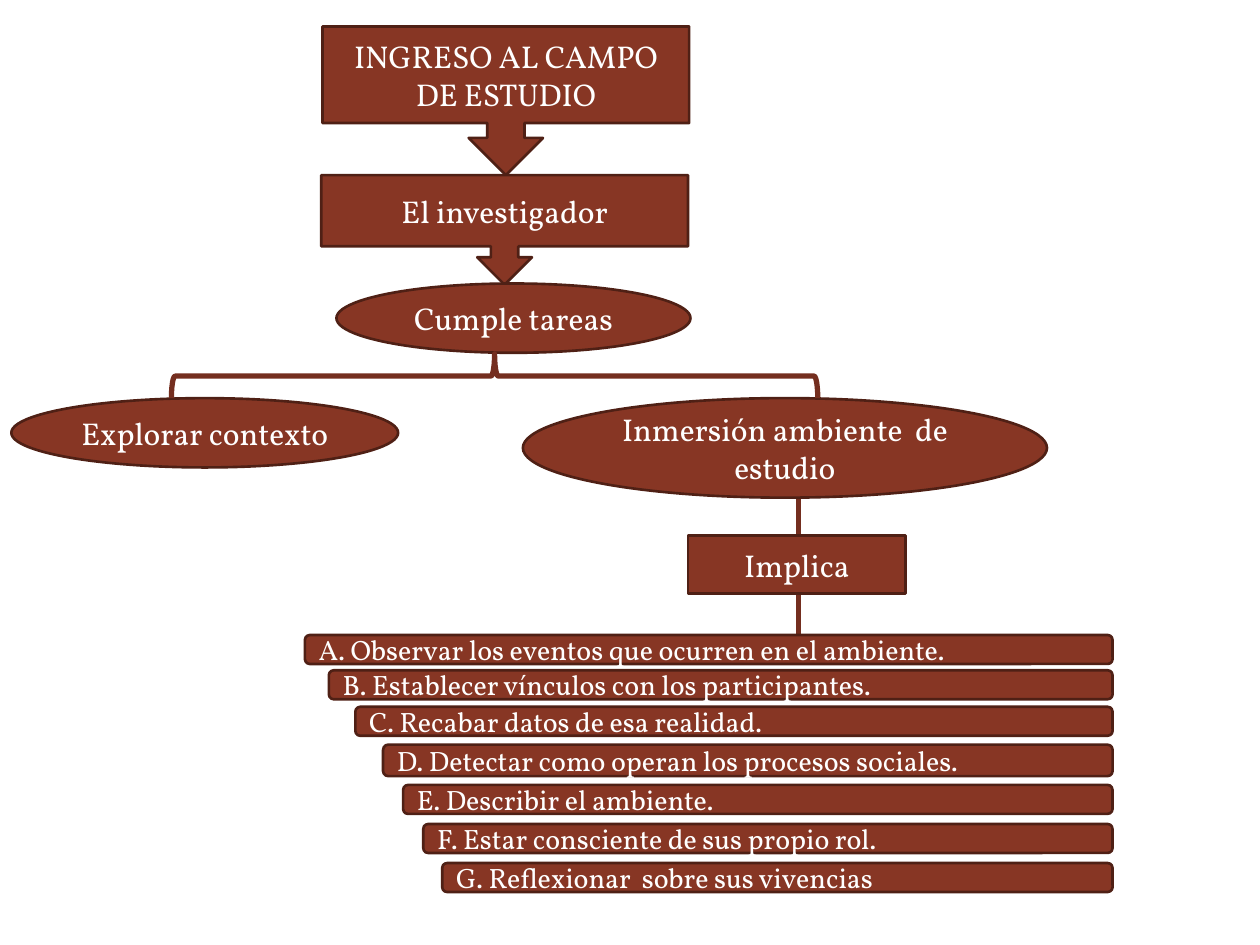
import pptx
import pptx.dml.color
import pptx.enum.shapes
import pptx.enum.text
import pptx.util
from lxml import etree

SHAPE = pptx.enum.shapes.MSO_SHAPE
ALIGN = pptx.enum.text.PP_ALIGN
BRICK, EDGE, LINK, WHITE = "873624", "4F2015", "742E1F", "FFFFFF"

deck = pptx.Presentation()
deck.slide_width = pptx.util.Inches(10)
deck.slide_height = pptx.util.Inches(7.5)
slide = deck.slides.add_slide(deck.slide_layouts[6])
cell = deck.slide_width // 100  # square grid, 100 columns by 75 rows


def paint(color_format, hex_color):
    color_format.rgb = pptx.dml.color.RGBColor.from_string(hex_color)


def add_node(kind, left, top, width, height, text, size=18, align=ALIGN.CENTER):
    """Add a filled node with its label; lengths are in grid cells."""
    node = slide.shapes.add_shape(
        kind, *(round(length * cell) for length in (left, top, width, height)))
    node.shadow.inherit = False
    node.fill.solid()
    paint(node.fill.fore_color, BRICK)
    paint(node.line.color, EDGE)
    node.line.width = pptx.util.Pt(1.5)
    frame = node.text_frame
    frame.word_wrap = True
    frame.vertical_anchor = pptx.enum.text.MSO_ANCHOR.MIDDLE
    frame.text = text
    label = frame.paragraphs[0]
    label.alignment = align
    font = label.runs[0].font
    font.name = "Vollkorn"
    font.size = pptx.util.Pt(size)
    paint(font.color, WHITE)


# Line from the immersion task through "Implica" to the list
stem = slide.shapes.add_connector(
    pptx.enum.shapes.MSO_CONNECTOR.STRAIGHT,
    *(round(length * cell) for length in (63.4, 39.5, 63.4, 50.4)))
paint(stem.line.color, LINK)
stem.line.width = pptx.util.Pt(3)
etree.SubElement(stem._element.spPr, pptx.oxml.ns.qn("a:effectLst"))

# Main flow
for node in [
    (SHAPE.DOWN_ARROW_CALLOUT, 25.6, 2.1, 29.1, 11.8, "INGRESO AL CAMPO DE ESTUDIO"),
    (SHAPE.DOWN_ARROW_CALLOUT, 25.5, 13.9, 29.1, 8.7, "El investigador"),
    (SHAPE.OVAL, 26.7, 22.5, 28.1, 5.5, "Cumple tareas"),
    (SHAPE.OVAL, 0.9, 31.6, 30.7, 5.5, "Explorar contexto"),
    (SHAPE.OVAL, 41.5, 31.6, 41.6, 7.9, "Inmersión ambiente  de estudio"),
    (SHAPE.RECTANGLE, 54.6, 42.5, 17.3, 4.6, "Implica"),
]:
    add_node(*node)

# Stepped list: the bars share one right edge
list_right = 88.3
for left, top, height, duty in [
    (24.2, 50.4, 2.3, "A. Observar los eventos que ocurren en el ambiente."),
    (26.1, 53.2, 2.3, "B. Establecer vínculos con los participantes."),
    (28.2, 56.1, 2.3, "C. Recabar datos de esa realidad."),
    (30.4, 59.1, 2.5, "D. Detectar como operan los procesos sociales."),
    (32.0, 62.3, 2.3, "E. Describir el ambiente."),
    (33.6, 65.4, 2.3, "F. Estar consciente de sus propio rol."),
    (35.1, 68.5, 2.3, "G. Reflexionar  sobre sus vivencias"),
]:
    add_node(SHAPE.ROUNDED_RECTANGLE, left, top, list_right - left, height,
             duty, size=16, align=ALIGN.LEFT)

# Brace that splits the tasks in two, turned to point upwards
fork = slide.shapes.add_shape(
    SHAPE.LEFT_BRACE, *(round(length * cell) for length in (37.5, 4.2, 3.5, 51.3)))
fork.rotation = 90
fork.shadow.inherit = False
fork.fill.background()
paint(fork.line.color, LINK)
fork.line.width = pptx.util.Pt(3)

deck.save("out.pptx")
